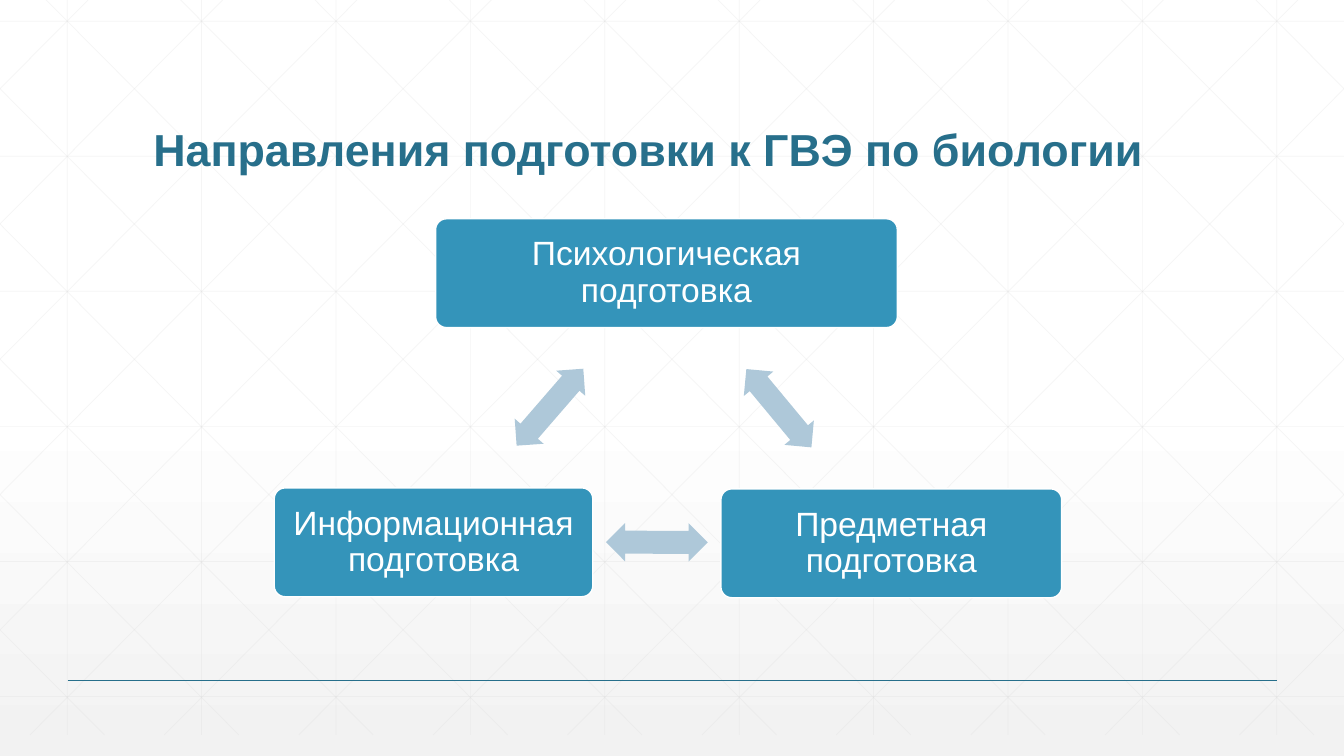
from lxml.etree import SubElement
from pptx import Presentation
from pptx.dml.color import RGBColor
from pptx.enum.shapes import MSO_CONNECTOR, MSO_SHAPE
from pptx.enum.text import MSO_ANCHOR, PP_ALIGN
from pptx.oxml.ns import qn
from pptx.util import Pt

PX = 9144
WIDTH, HEIGHT = 1333, 750
WHITE = RGBColor(0xFF, 0xFF, 0xFF)
PALE = RGBColor(0xF2, 0xF2, 0xF2)
GRID = RGBColor(0xD9, 0xD9, 0xD9)
DEEP = RGBColor(0x27, 0x6F, 0x8B)
BLUE = RGBColor(0x34, 0x94, 0xBA)
ARROW = RGBColor(0xAE, 0xC8, 0xD9)
FONT = "Arial"


def px(*lengths):
    """Turn pixel lengths into EMU."""
    return [round(n * PX) for n in lengths]


def style_text(tf, size, color, bold=False):
    """Format every paragraph and run of a text frame."""
    for p in tf.paragraphs:
        p.line_spacing = 0.9
        for r in p.runs:
            r.font.name = FONT
            r.font.size = Pt(size)
            r.font.bold = bold
            r.font.color.rgb = color


def add_line(s, x1, y1, x2, y2, color, width, alpha=100):
    """Draw a straight line without a shadow."""
    line = s.shapes.add_connector(MSO_CONNECTOR.STRAIGHT, *px(x1, y1, x2, y2))
    line.line.color.rgb = color
    line.line.width = Pt(width)
    SubElement(line._element.spPr, qn("a:effectLst"))
    if alpha < 100:
        clr = line._element.spPr.find(".//" + qn("a:srgbClr"))
        SubElement(clr, qn("a:alpha"), val=str(alpha * 1000))


def add_background(s):
    """Fill the background with a fade from white to pale grey."""
    fill = s.background.fill
    fill.gradient()
    fill.gradient_angle = 270
    for stop, pos, color in zip(fill.gradient_stops, (0.53, 1), (WHITE, PALE)):
        stop.position = pos
        stop.color.rgb = color


def add_grid(s, w, h, bottom=729, origin=-21):
    """Draw the upright, level and slanted lines of the backdrop."""
    step = w / 10
    lines = [(w * (i + 0.5) / 10, 0, w * (i + 0.5) / 10, bottom) for i in range(10)]
    lines += [(0, 21 + 134 * i, w, 21 + 134 * i) for i in range(6)]
    slope = 745 / h
    for k in range(-5, 10):
        start = 25 + step * k
        y1 = max(0, origin - start / slope)
        y2 = min(bottom, origin + (w - start) / slope)
        x1, x2 = (start + slope * (y - origin) for y in (y1, y2))
        lines += [(x1, y1, x2, y2), (w - x1, y1, w - x2, y2)]
    for ends in lines:
        add_line(s, *ends, GRID, 0.5, 25)


def add_title(s, x, y, w, h, text):
    """Place the title placeholder above the backdrop."""
    sp = s.shapes.title
    s.shapes._spTree.append(sp._element)
    sp.left, sp.top, sp.width, sp.height = px(x, y, w, h)
    tf = sp.text_frame
    tf.text = text
    tf.word_wrap = True
    tf.vertical_anchor = MSO_ANCHOR.BOTTOM
    tf.paragraphs[0].alignment = PP_ALIGN.LEFT
    style_text(tf, 32, DEEP, True)


def add_box(s, x, y, w, h, text):
    """Draw a rounded box with a centred label."""
    sp = s.shapes.add_shape(MSO_SHAPE.ROUNDED_RECTANGLE, *px(x, y, w, h))
    sp.adjustments[0] = 0.1
    sp.shadow.inherit = False
    sp.fill.solid()
    sp.fill.fore_color.rgb = BLUE
    sp.line.color.rgb = WHITE
    sp.line.width = Pt(1)
    tf = sp.text_frame
    tf.text = text
    tf.word_wrap = True
    tf.vertical_anchor = MSO_ANCHOR.MIDDLE
    tf.margin_left, tf.margin_right, tf.margin_top, tf.margin_bottom = px(10, 10, 10, 10)
    tf.paragraphs[0].alignment = PP_ALIGN.CENTER
    style_text(tf, 24, WHITE)


def add_arrow(s, x, y, angle):
    """Draw a two-headed arrow turned by an angle."""
    sp = s.shapes.add_shape(MSO_SHAPE.LEFT_RIGHT_ARROW, *px(x, y, 101, 38))
    sp.adjustments[0], sp.adjustments[1] = 0.6, 0.5
    sp.rotation = angle
    sp.shadow.inherit = False
    sp.fill.solid()
    sp.fill.fore_color.rgb = ARROW
    sp.line.fill.background()


def add_cycle(s, x, y):
    """Draw three boxes joined by arrows from a top left corner."""
    for dx, dy, w, text in (
        (160, 0, 458, "Психологическая подготовка"),
        (443, 268, 338, "Предметная подготовка"),
        (0, 267, 316, "Информационная подготовка"),
    ):
        add_box(s, x + dx, y + dy, w, 108, text)
    for dx, dy, angle in ((450, 169, 50.3), (329, 302, 180.2), (223, 168, 310.9)):
        add_arrow(s, x + dx, y + dy, angle)


def main():
    """Build and save the slide."""
    prs = Presentation()
    prs.slide_width, prs.slide_height = px(WIDTH, HEIGHT)
    s = prs.slides.add_slide(prs.slide_layouts[5])
    add_background(s)
    add_grid(s, WIDTH, HEIGHT)
    add_line(s, 67, 675, 1267, 675, DEEP, 1)
    add_title(s, 142, 55, 1050, 125, "Направления подготовки к ГВЭ по биологии")
    add_cycle(s, 272, 217)
    prs.save("out.pptx")


if __name__ == "__main__":
    main()
